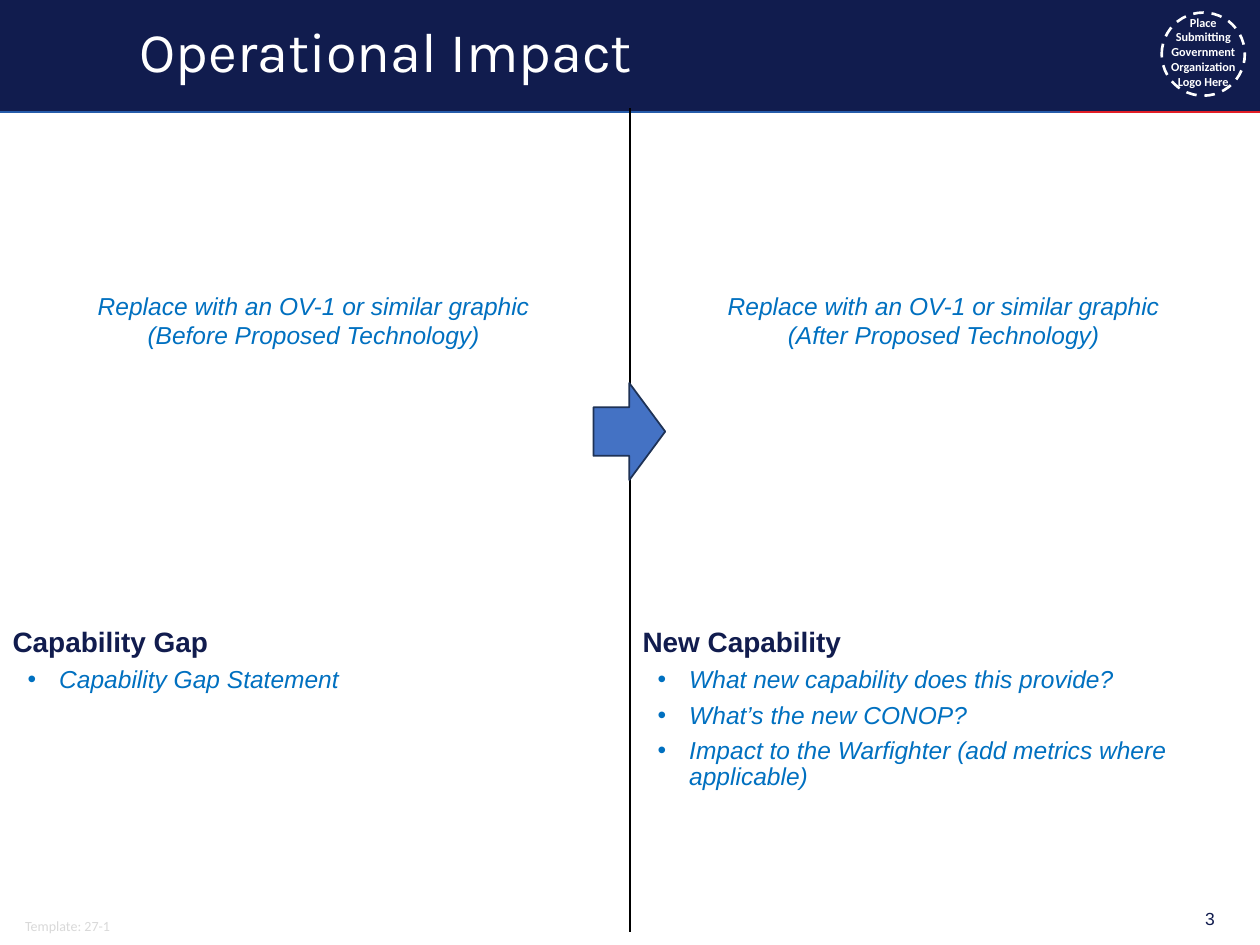
from lxml import etree
from pptx import Presentation
from pptx import util as u
from pptx.dml.color import RGBColor
from pptx.enum import dml, shapes, text
from pptx.oxml import ns

NAVY = RGBColor(0x11, 0x1C, 0x4E)
RULE = RGBColor(0x26, 0x5C, 0xAA)
RED = RGBColor(0xE2, 0x1E, 0x26)
BLUE = RGBColor(0x00, 0x70, 0xC0)
ARROW = RGBColor(0x44, 0x72, 0xC4)
EDGE = RGBColor(0x1E, 0x32, 0x56)
GRAY = RGBColor(0xD9, 0xD9, 0xD9)
WHITE = RGBColor(0xFF, 0xFF, 0xFF)
BLACK = RGBColor(0x00, 0x00, 0x00)

LEFT, MID, RIGHT = text.PP_ALIGN.LEFT, text.PP_ALIGN.CENTER, text.PP_ALIGN.RIGHT


class Page:
    """Holds the style and the current slide."""

    face = "Arial"

    def __init__(self, slide):
        self.slide = slide

    def font(self, para, size, color, face=None, bold=False, italic=False):
        font = para.font
        font.name, font.size = face or self.face, u.Pt(size)
        font.bold, font.italic = bold, italic
        font.color.rgb = color

    def shape(self, kind, box, fill=None, line=None, width=1, dash=None):
        item = self.slide.shapes.add_shape(kind, *map(u.Inches, box))
        item.shadow.inherit = False
        if fill is None:
            item.fill.background()
        else:
            item.fill.solid()
            item.fill.fore_color.rgb = fill
        if line is None:
            item.line.fill.background()
        else:
            item.line.color.rgb = line
            item.line.width = u.Pt(width)
            item.line.dash_style = dash

    def line(self, start, end, color, width=1):
        item = self.slide.shapes.add_connector(
            shapes.MSO_CONNECTOR.STRAIGHT, *map(u.Inches, start + end))
        item.line.color.rgb = color
        item.line.width = u.Pt(width)
        etree.SubElement(item._element.spPr, ns.qn("a:effectLst"))

    def label(self, box, words, size, color, align=LEFT, wrap=True,
              anchor=text.MSO_ANCHOR.TOP, **style):
        frame = self.slide.shapes.add_textbox(*map(u.Inches, box)).text_frame
        frame.word_wrap = wrap
        frame.vertical_anchor = anchor
        frame.text = words
        for para in frame.paragraphs:
            para.alignment = align
            self.font(para, size, color, **style)

    def place(self, item, box, anchor):
        """Move a placeholder to its box and to the front."""
        item.left, item.top, item.width, item.height = map(u.Inches, box)
        item._element.getparent().append(item._element)
        frame = item.text_frame
        frame.word_wrap = True
        frame.auto_size = text.MSO_AUTO_SIZE.NONE
        frame.vertical_anchor = anchor
        return frame

    def title(self, box, words):
        frame = self.place(self.slide.shapes.title, box, text.MSO_ANCHOR.MIDDLE)
        frame.text = words
        para = frame.paragraphs[0]
        para.alignment, para.line_spacing = LEFT, 0.9
        self.font(para, 32, WHITE, face="Karla")

    def bullet(self, para, char=None, left=0, hang=0):
        props = para._p.get_or_add_pPr()
        props.set("marL", str(u.Inches(left)))
        props.set("indent", str(u.Inches(-hang)))
        if char:
            etree.SubElement(props, ns.qn("a:buFont")).set("typeface", "Arial")
            etree.SubElement(props, ns.qn("a:buChar")).set("char", char)
        else:
            etree.SubElement(props, ns.qn("a:buNone"))

    def points(self, slot, box, head, items):
        frame = self.place(self.slide.placeholders[slot], box, text.MSO_ANCHOR.TOP)
        frame.text = "\n".join([head] + items)
        for row, para in enumerate(frame.paragraphs):
            para.alignment, para.line_spacing = LEFT, 0.9
            para.space_before = u.Pt(5 if row else 0)
            if row:
                para.level = 1
                self.bullet(para, "•", 0.37, 0.25)
                self.font(para, 14, BLUE, italic=True)
            else:
                self.bullet(para)
                self.font(para, 16, NAVY, bold=True)


def main():
    deck = Presentation()
    deck.slide_width, deck.slide_height = u.Inches(10), u.Inches(7.5)
    page = Page(deck.slides.add_slide(deck.slide_layouts[3]))
    kind = shapes.MSO_SHAPE

    # Header band and its two-colour rule
    page.shape(kind.RECTANGLE, (0, 0, 10, 0.89), fill=NAVY)
    page.line((0, 0.89), (8.49, 0.89), RULE)
    page.line((10, 0.89), (8.49, 0.89), RED)
    page.title((1.01, 0.06, 7.57, 0.74), "Operational Impact")

    # Logo spot
    page.label((9.17, 0.07, 0.76, 0.69),
               "Place Submitting Government Organization Logo Here",
               7, WHITE, MID, face="Calibri", bold=True)
    page.shape(kind.OVAL, (9.22, 0.1, 0.66, 0.66), line=WHITE, width=1.5,
               dash=dml.MSO_LINE.DASH)

    # Footer
    page.label((0.1, 7.23, 0.98, 0.24), "Template: 27-1", 8, GRAY, face="Calibri")
    page.label((8.49, 7.09, 1.25, 0.4), "3", 10, NAVY, RIGHT,
               anchor=text.MSO_ANCHOR.MIDDLE)

    # Before and after halves
    halves = [
        ("Before", "Capability Gap", ["Capability Gap Statement"]),
        ("After", "New Capability", [
            "What new capability does this provide?",
            "What’s the new CONOP?",
            "Impact to the Warfighter (add metrics where applicable)"]),
    ]
    for side, (when, head, items) in enumerate(halves):
        left = 5 * side
        page.label((left + 0.67, 2.26, 3.64, 0.57),
                   "Replace with an OV-1 or similar graphic\n"
                   f"({when} Proposed Technology)",
                   14, BLUE, MID, wrap=False, italic=True)
        page.points(side + 1, (left, 4.94, 4.99, 2.4), head, items)

    # Divider and arrow
    page.line((5, 0.86), (5, 7.4), BLACK, 1.5)
    page.shape(kind.RIGHT_ARROW, (4.71, 3.04, 0.57, 0.77), fill=ARROW, line=EDGE)

    deck.save("out.pptx")


if __name__ == "__main__":
    main()
